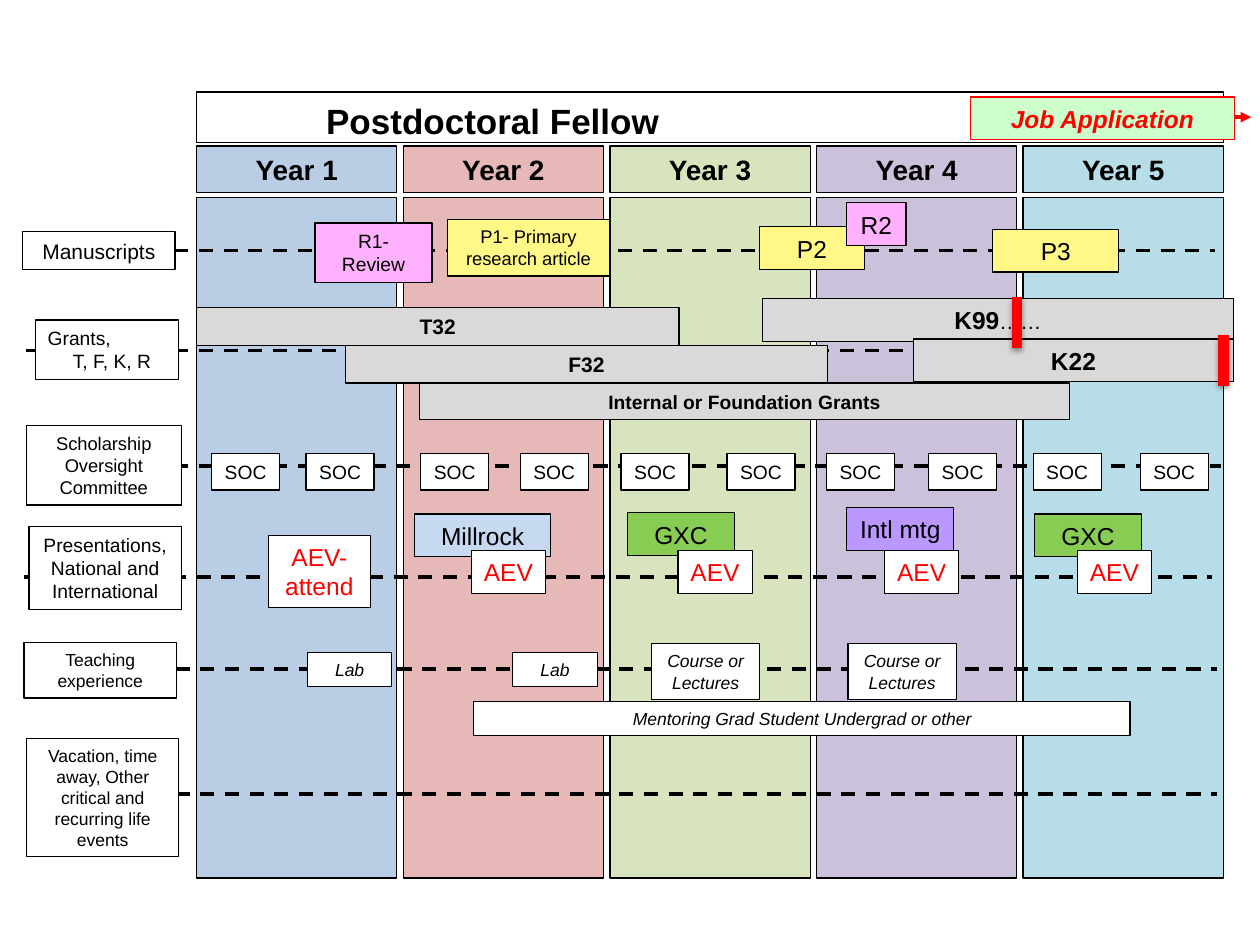
from collections import namedtuple

from lxml import etree
from pptx import Presentation
from pptx.dml.color import RGBColor
from pptx.enum.dml import MSO_LINE
from pptx.enum.shapes import MSO_CONNECTOR, MSO_SHAPE
from pptx.enum.text import MSO_ANCHOR, MSO_AUTO_SIZE, PP_ALIGN
from pptx.oxml.ns import qn
from pptx.util import Pt

RECT, STRAIGHT, DASH = MSO_SHAPE.RECTANGLE, MSO_CONNECTOR.STRAIGHT, MSO_LINE.DASH
MIDDLE, GROW = MSO_ANCHOR.MIDDLE, MSO_AUTO_SIZE.SHAPE_TO_FIT_TEXT
CENTER, LEFT = PP_ALIGN.CENTER, PP_ALIGN.LEFT
RIGHT_SIDE = 3
PX = 9144  # EMU per px, 100 px to the inch

Box = namedtuple("Box", "left top width height")
Style = namedtuple("Style", "fill size color bold italic line",
                   defaults=("000000", False, False, "000000"))


class Theme:
    font = "Arial"
    ink, accent, shadow = "000000", "FF0000", "000000"
    years = ["B9CDE5", "E6B9B8", "D7E4BD", "CCC1DA", "B7DEE8"]
    border, rule, marker = 0.75, 2, 6
    title = Style(None, 20, bold=True)
    header = Style("FFFFFF", 20)
    year_size = 16
    job = Style("CCFFCC", 14, accent, True, True, accent)
    label10, label10_5, label11, label12 = (Style("FFFFFF", size) for size in (10, 10.5, 11, 12))
    article, article_small = Style("FFF887", 14), Style("FFF887", 10.5)
    review, review_small = Style("FFB1FD", 14), Style("FFB1FD", 11)
    award11, award12, award14 = (Style("D9D9D9", size, bold=True) for size in (11, 12, 14))
    conference, international, symposium = (Style(fill, 14) for fill in ("88CC53", "BA98FF", "C6D9F1"))
    society = Style("FFFFFF", 14, accent)
    teaching = Style("FFFFFF", 10, italic=True)


def emu(*lengths):
    return [length * PX for length in lengths]


def add_text(paragraph, text, style):
    run = paragraph.add_run()
    run.text = text
    formats = {"name": Theme.font, "size": Pt(style.size), "bold": style.bold, "italic": style.italic}
    for name, value in formats.items():
        setattr(run.font, name, value)
    run.font.color.rgb = RGBColor.from_string(style.color)


def add_box(slide, box, style, *texts):
    """Add a bordered rectangle with one paragraph for each text."""
    shape = slide.shapes.add_shape(RECT, *emu(*box))
    shape.shadow.inherit = False
    shape.fill.solid()
    shape.fill.fore_color.rgb = RGBColor.from_string(style.fill)
    shape.line.color.rgb = RGBColor.from_string(style.line)
    shape.line.width = Pt(Theme.border)
    frame = shape.text_frame
    for index, text in enumerate(texts):
        paragraph = frame.add_paragraph() if index else frame.paragraphs[0]
        paragraph.alignment = CENTER
        add_text(paragraph, text, style)
    if texts:
        for name, value in {"word_wrap": True, "vertical_anchor": MIDDLE, "auto_size": GROW}.items():
            setattr(frame, name, value)
    return shape


def add_line(slide, start, end, color, width, dash=None):
    line = slide.shapes.add_connector(STRAIGHT, *emu(*start, *end))
    line.line.color.rgb = RGBColor.from_string(color)
    line.line.width = Pt(width)
    if dash:
        line.line.dash_style = dash
    etree.SubElement(line._element.spPr, qn("a:effectLst"))
    return line


def add_year_columns(slide, area):
    head_height, body_offset, pitch, width = 37, 41, 164, 159
    for index, fill in enumerate(Theme.years):
        left = area.left + index * pitch
        style = Style(fill, Theme.year_size, bold=True)
        add_box(slide, Box(left, area.top, width, head_height), style, f"Year {index + 1}")
        add_box(slide, Box(left, area.top + body_offset, width, area.height - body_offset), style)


def add_header(slide, area):
    header = add_box(slide, area, Theme.header)
    middle = area.top + area.height // 2
    right = area.left + area.width
    arrow = add_line(slide, (right, middle), (right + 22, middle), Theme.accent, Theme.rule)
    arrow.begin_connect(header, RIGHT_SIDE)
    etree.SubElement(arrow._element.spPr.find(qn("a:ln")), qn("a:tailEnd"), type="triangle")
    title = slide.shapes.add_textbox(*emu(area.left + 93, area.top + 1, 287, 44)).text_frame
    title.word_wrap = False
    title.auto_size = GROW
    add_text(title.paragraphs[0], "Postdoctoral Fellow", Theme.title)
    add_box(slide, Box(right - 201, area.top + 4, 210, 34), Theme.job, "Job Application")


def add_lane(slide, area, rule, label, events=()):
    """Draw a dashed timeline, its label and its events, all relative to area.

    rule is (start x, end x, y); label is (box, style, texts); an event is
    (text, style, box). Returns the label shape and the event shapes.
    """
    start, end, y = rule

    def place(box):
        return Box(area.left + box[0], area.top + box[1], *box[2:])

    add_line(slide, (area.left + start, area.top + y), (area.left + end, area.top + y),
             Theme.ink, Theme.rule, DASH)
    box, style, texts = label
    label_shape = add_box(slide, place(box), style, *texts)
    return label_shape, [add_box(slide, place(spot), look, text) for text, look, spot in events]


def add_manuscripts(slide, area):
    add_lane(slide, area, (21, 964, 39), ((18, 24, 121, 30), Theme.label12, ["Manuscripts"]), [
        ("P2", Theme.article, (603, 20, 83, 34)),
        ("P1- Primary research article", Theme.article_small, (355, 14, 129, 45)),
        ("R1- Review", Theme.review_small, (250, 17, 93, 47)),
        ("P3", Theme.article, (788, 22, 100, 34)),
        ("R2", Theme.review, (672, 1, 47, 34)),
    ])


def add_deadline(slide, x, top):
    marker = add_line(slide, (x, top), (x, top + 40), Theme.accent, Theme.marker)
    effects = marker._element.spPr.find(qn("a:effectLst"))
    shadow = etree.SubElement(effects, qn("a:outerShdw"), blurRad=str(Pt(3.1)), dist=str(Pt(1.6)),
                              dir="5400000", rotWithShape="0")
    color = etree.SubElement(shadow, qn("a:srgbClr"), val=Theme.shadow)
    etree.SubElement(color, qn("a:alpha"), val="38000")


def add_grants(slide, area):
    label, awards = add_lane(
        slide, area, (21, 965, 42), ((28, 18, 114, 47), Theme.label11, ["Grants,", "T, F, K, R"]), [
            ("F32", Theme.award12, (274, 38, 383, 30)),
            ("K99", Theme.award14, (605, 1, 374, 34)),
            ("K22", Theme.award14, (725, 33, 254, 34)),
            ("T32", Theme.award12, (156, 8, 383, 30)),
            ("Internal or Foundation Grants", Theme.award11, (333, 68, 516, 29)),
        ])
    for paragraph, indent in zip(label.text_frame.paragraphs, (0, 20)):
        paragraph.alignment = LEFT
        paragraph._p.get_or_add_pPr().set("marL", str(indent * PX))
    add_text(awards[1].text_frame.paragraphs[0], "……", Theme.label12)
    for x, y in [(807, 0), (971, 30)]:
        add_deadline(slide, area.left + x, area.top + y)


def add_committee(slide, area):
    meetings = [168, 243, 334, 413, 493, 577, 656, 737, 820, 905]
    add_lane(slide, area, (21, 969, 32),
             ((21, 0, 123, 63), Theme.label10_5, ["Scholarship Oversight Committee"]),
             [("SOC", Theme.label11, (x, 22, 54, 29)) for x in meetings])


def add_presentations(slide, area):
    meetings = [
        ("GXC", Theme.conference, (498, 4, 85, 34)),
        ("GXC", Theme.conference, (821, 5, 85, 34)),
        ("Intl mtg", Theme.international, (672, 0, 85, 34)),
        ("Millrock", Theme.symposium, (329, 5, 108, 34)),
        ("AEV- attend", Theme.society, (213, 22, 81, 57)),
    ]
    society = [("AEV", Theme.society, (x, 34, 59, 34)) for x in (374, 538, 702, 855)]
    add_lane(slide, area, (19, 962, 55),
             ((23, 15, 121, 66), Theme.label11, ["Presentations, National and International"]),
             meetings + society)


def add_teaching(slide, area):
    labs = [("Lab", Theme.teaching, (x, 8, 67, 27)) for x in (244, 407)]
    courses = [("Course or Lectures", Theme.teaching, (x, 1, 86, 44)) for x in (517, 673)]
    mentoring = ("Mentoring Grad Student Undergrad or other", Theme.teaching, (376, 47, 521, 27))
    add_lane(slide, area, (22, 966, 21), ((19, 0, 121, 44), Theme.label10, ["Teaching experience"]),
             labs + courses + [mentoring])


def add_life_events(slide, area):
    add_lane(slide, area, (22, 966, 44),
             ((21, 0, 121, 94), Theme.label10,
              ["Vacation, time away, Other critical and recurring life events"]))


def main():
    deck = Presentation()
    deck.slide_width, deck.slide_height = emu(1000, 750)
    slide = deck.slides.add_slide(deck.slide_layouts[6])
    add_year_columns(slide, Box(156, 116, 815, 581))
    add_header(slide, Box(156, 73, 815, 40))
    lanes = [(add_manuscripts, 160, 64), (add_grants, 236, 97), (add_committee, 338, 63),
             (add_presentations, 403, 81), (add_teaching, 510, 74), (add_life_events, 586, 94)]
    for add_region, top, height in lanes:
        add_region(slide, Box(0, top, 1000, height))
    deck.save("out.pptx")


if __name__ == "__main__":
    main()
